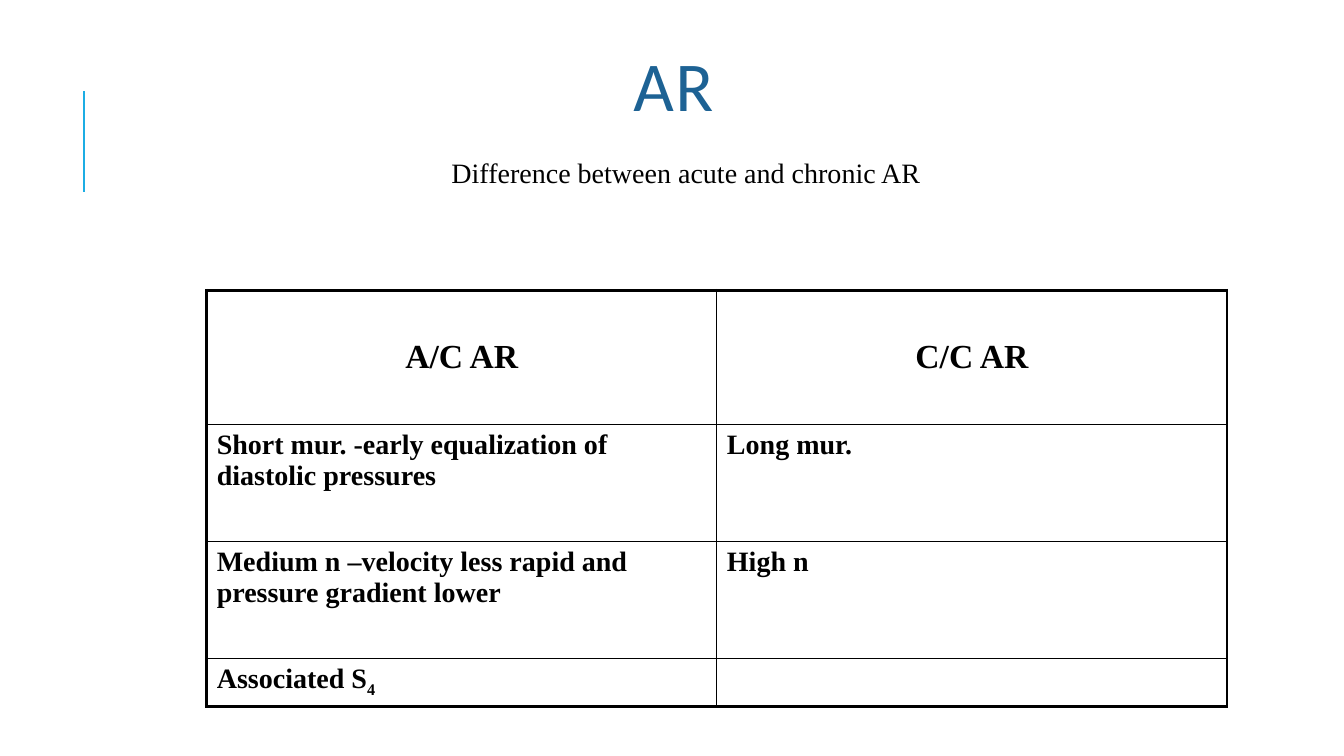
import pptx
import pptx.util
import pptx.dml.color
import pptx.enum.shapes
import pptx.enum.text
import pptx.oxml.ns
import lxml.etree

Inches = pptx.util.Inches
Pt = pptx.util.Pt
ALIGN = pptx.enum.text.PP_ALIGN
ANCHOR = pptx.enum.text.MSO_ANCHOR
qn = pptx.oxml.ns.qn

COLORS = {"title": "1D6294", "accent": "1CADE4", "text": "000000"}
SERIF = "Times New Roman"
ROW_HEIGHTS = [1.33, 1.16, 1.16, 0.44]
ROWS = [
    ("A/C AR", "C/C AR"),
    ("Short mur. -early equalization of diastolic pressures", "Long mur."),
    ("Medium n –velocity less rapid and pressure gradient lower", "High n"),
    ("Associated S", ""),
]
OUTER_WIDTH, INNER_WIDTH = 2.25, 1


def rgb(name):
    return pptx.dml.color.RGBColor.from_string(COLORS[name])


def style(paragraph, size, color="text", name=SERIF, bold=False):
    paragraph.font.size = Pt(size)
    paragraph.font.name = name
    paragraph.font.bold = bold
    paragraph.font.color.rgb = rgb(color)


def add_accent_line(slide, x, top, bottom):
    line = slide.shapes.add_connector(
        pptx.enum.shapes.MSO_CONNECTOR.STRAIGHT,
        Inches(x), Inches(bottom), Inches(x), Inches(top))
    line.line.color.rgb = rgb("accent")
    line.line.width = Pt(1.5)
    lxml.etree.SubElement(line._element.spPr, qn("a:effectLst"))


def add_centered_text(slide, box, text, line_spacing, anchor):
    shape = slide.shapes.add_textbox(*map(Inches, box))
    frame = shape.text_frame
    frame.word_wrap = True
    frame.vertical_anchor = anchor
    paragraph = frame.paragraphs[0]
    paragraph.text = text
    paragraph.alignment = ALIGN.CENTER
    paragraph.line_spacing = line_spacing
    return frame


def add_title(slide, box):
    frame = add_centered_text(slide, box, "AR", 0.8, ANCHOR.MIDDLE)
    paragraph = frame.paragraphs[0]
    style(paragraph, 50, "title", "Calibri")
    paragraph.runs[0]._r.get_or_add_rPr().set("spc", "100")


def add_subtitle(slide, box):
    frame = add_centered_text(
        slide, box, "Difference between acute and chronic AR", 0.9, ANCHOR.TOP)
    frame.margin_left = Inches(0.15)
    frame.margin_right = frame.margin_top = frame.margin_bottom = Inches(0.05)
    style(frame.paragraphs[0], 20)


def set_borders(cell, widths):
    properties = cell._tc.get_or_add_tcPr()
    for index, (side, width) in enumerate(widths.items()):
        border = lxml.etree.Element(qn("a:ln" + side), w=str(Pt(width)))
        fill = lxml.etree.SubElement(border, qn("a:solidFill"))
        lxml.etree.SubElement(fill, qn("a:srgbClr"), val=COLORS["text"])
        properties.insert(index, border)


def add_comparison_table(slide, left, top, width):
    row_count, column_count = len(ROWS), len(ROWS[0])
    frame = slide.shapes.add_table(
        row_count, column_count, Inches(left), Inches(top),
        Inches(width), Inches(sum(ROW_HEIGHTS)))
    table = frame.table
    table.first_row = table.horz_banding = False
    for row_index, texts in enumerate(ROWS):
        table.rows[row_index].height = Inches(ROW_HEIGHTS[row_index])
        is_header = row_index == 0
        for column_index, text in enumerate(texts):
            cell = table.cell(row_index, column_index)
            cell.text = text
            cell.fill.background()
            cell.vertical_anchor = ANCHOR.MIDDLE if is_header else ANCHOR.TOP
            paragraph = cell.text_frame.paragraphs[0]
            paragraph.alignment = ALIGN.CENTER if is_header else ALIGN.LEFT
            style(paragraph, 24 if is_header else 20, bold=True)
            at_edge = {
                "L": column_index == 0,
                "R": column_index == column_count - 1,
                "T": is_header,
                "B": row_index == row_count - 1,
            }
            set_borders(cell, {side: OUTER_WIDTH if edge else INNER_WIDTH
                               for side, edge in at_edge.items()})
    subscript = table.cell(row_count - 1, 0).text_frame.paragraphs[0].add_run()
    subscript.text = "4"
    subscript._r.get_or_add_rPr().set("baseline", "-25000")


def main():
    presentation = pptx.Presentation()
    presentation.slide_width = Inches(13.33)
    presentation.slide_height = Inches(7.5)
    slide = presentation.slides.add_slide(presentation.slide_layouts[6])
    add_accent_line(slide, 0.83, 0.9, 1.9)
    add_title(slide, (2.18, 0.28, 9, 1.25))
    add_subtitle(slide, (3.81, 1.53, 5.89, 4.95))
    add_comparison_table(slide, 2.05, 2.88, 10.12)
    presentation.save("out.pptx")


if __name__ == "__main__":
    main()
